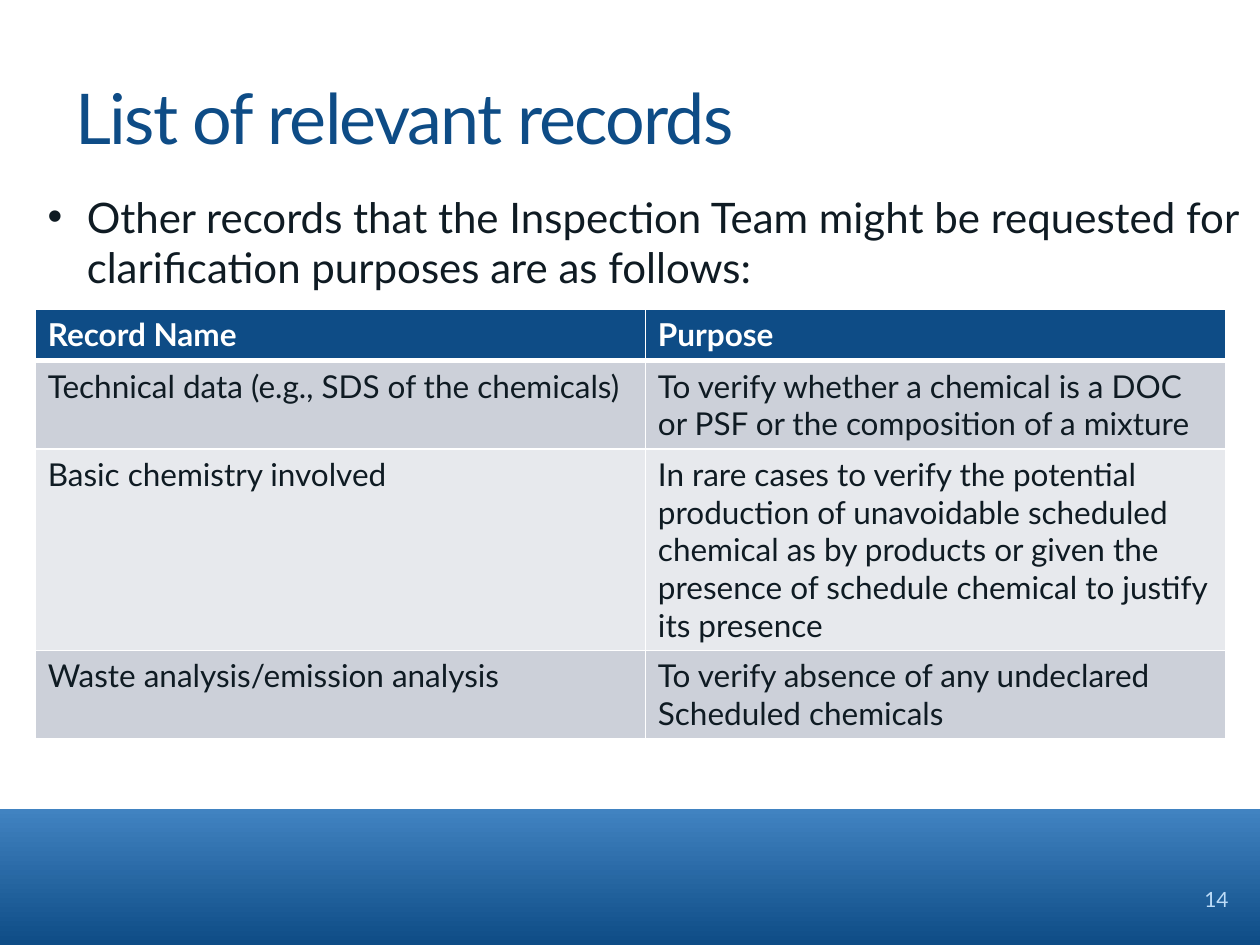
import pptx
import pptx.dml.color
import pptx.enum.shapes
import pptx.enum.text
import pptx.oxml
import pptx.oxml.ns
import pptx.util
from pptx.util import Cm, Pt

ALIGN = pptx.enum.text.PP_ALIGN
ANCHOR = pptx.enum.text.MSO_ANCHOR


def colour(value):
    return pptx.dml.color.RGBColor.from_string(value)


def add_xml(parent, markup):
    """Append one DrawingML element, given as text, to parent."""
    head, tail = markup.split(" ", 1)
    namespace = pptx.oxml.ns.nsdecls("a")
    parent.append(pptx.oxml.parse_xml(f"{head} {namespace} {tail}"))


def write(frame, text, size=18, fill="0F1B23", font="Lato", bold=False,
          align=ALIGN.LEFT, anchor=ANCHOR.TOP, bullet=None, indent=0, spacing=0):
    """Put one formatted paragraph into a text frame."""
    frame.word_wrap = True
    frame.vertical_anchor = anchor
    para = frame.paragraphs[0]
    para.alignment = align
    if bullet:
        properties = para._p.get_or_add_pPr()
        properties.set("marL", str(indent))
        properties.set("indent", str(-indent))
        add_xml(properties, '<a:buFont typeface="Arial"/>')
        add_xml(properties, f'<a:buChar char="{bullet}"/>')
    span = para.add_run()
    span.text = text
    span.font.name = font
    span.font.size = Pt(size)
    span.font.bold = bold
    span.font.color.rgb = colour(fill)
    if spacing:
        span._r.get_or_add_rPr().set("spc", str(spacing))


class SlideBuilder:
    blue = "0E4C86"
    white = "FFFFFF"
    row_fills = ("CCD0D9", "E7E9ED")

    def __init__(self, deck):
        self.page = deck.slides.add_slide(deck.slide_layouts[5])
        self.page.background.fill.solid()
        self.page.background.fill.fore_color.rgb = colour(self.white)

    def title(self, text, left, top, width, height):
        box = self.page.shapes.title
        box.left, box.top, box.width, box.height = left, top, width, height
        write(box.text_frame, text, size=40, fill=self.blue,
              anchor=ANCHOR.MIDDLE, spacing=-100)

    def shape(self, kind, left, top, width, height):
        shape = self.page.shapes.add_shape(kind, left, top, width, height)
        shape.shadow.inherit = False
        shape.line.fill.background()
        return shape

    def band(self, left, top, width, height):
        band = self.shape(pptx.enum.shapes.MSO_SHAPE.RECTANGLE, left, top, width, height)
        band.fill.gradient()
        band.fill.gradient_angle = 270
        for stop, value in zip(band.fill.gradient_stops, ("4183C1", self.blue)):
            stop.color.rgb = colour(value)

    def page_number(self, text, left, top, width, height):
        bracket = self.shape(pptx.enum.shapes.MSO_SHAPE.DOUBLE_BRACKET,
                             left, top, width, height)
        bracket.adjustments[0] = 0
        bracket.fill.background()
        write(bracket.text_frame, text, size=12, fill="BDDCF8",
              align=ALIGN.RIGHT, anchor=ANCHOR.MIDDLE)

    def bullet_text(self, text, left, top, width, height):
        box = self.page.shapes.add_textbox(left, top, width, height)
        write(box.text_frame, text, size=24, bullet="•", indent=Cm(0.79))

    def borders(self, cell, **widths):
        for side in "LRTB":
            add_xml(cell._tc.get_or_add_tcPr(),
                    f'<a:ln{side} w="{Pt(widths.get(side, 1))}"><a:solidFill>'
                    f'<a:srgbClr val="{self.white}"/></a:solidFill></a:ln{side}>')

    def table(self, rows, left, top, widths, heights):
        table = self.page.shapes.add_table(
            len(rows), len(widths), left, top, sum(widths), sum(heights)).table
        for column, width in zip(table.columns, widths):
            column.width = width
        for index, (texts, height) in enumerate(zip(rows, heights)):
            table.rows[index].height = height
            header = index == 0
            fill = self.blue if header else self.row_fills[(index - 1) % 2]
            for cell, text in zip(table.rows[index].cells, texts):
                # A thicker rule parts the header from the body
                self.borders(cell, B=3 if header else 1, T=3 if index == 1 else 1)
                cell.fill.solid()
                cell.fill.fore_color.rgb = colour(fill)
                write(cell.text_frame, text, bold=header,
                      fill=self.white if header else "0F1B23")


RECORDS = [
    ("Record Name", "Purpose"),
    ("Technical data (e.g., SDS of the chemicals)",
     "To verify whether a chemical is a DOC or PSF or the composition of a mixture"),
    ("Basic chemistry involved",
     "In rare cases to verify the potential production of unavoidable "
     "scheduled chemical as by products or given the presence of schedule "
     "chemical to justify its presence"),
    ("Waste analysis/emission analysis",
     "To verify absence of any undeclared Scheduled chemicals"),
]


def main():
    deck = pptx.Presentation()
    deck.slide_width, deck.slide_height = Cm(25.4), Cm(19.05)
    slide = SlideBuilder(deck)

    # Footer band and page number
    slide.band(0, Cm(16.31), deck.slide_width, Cm(2.74))
    slide.page_number("14", Cm(22.91), Cm(17.68), Cm(2.11), Cm(0.89))

    # Title, table and introduction
    slide.title("List of relevant records", Cm(1.27), Cm(0.76), Cm(22.63), Cm(3.18))
    slide.table(RECORDS, Cm(0.71), Cm(6.24), widths=(Cm(12.3), Cm(11.7)),
                heights=(Cm(1.03), Cm(1.78), Cm(4.06), Cm(1.78)))
    slide.bullet_text("Other records that the Inspection Team might be requested for "
                      "clarification purposes are as follows:",
                      Cm(0.71), Cm(3.73), Cm(26), Cm(2.31))

    deck.save("out.pptx")


if __name__ == "__main__":
    main()
